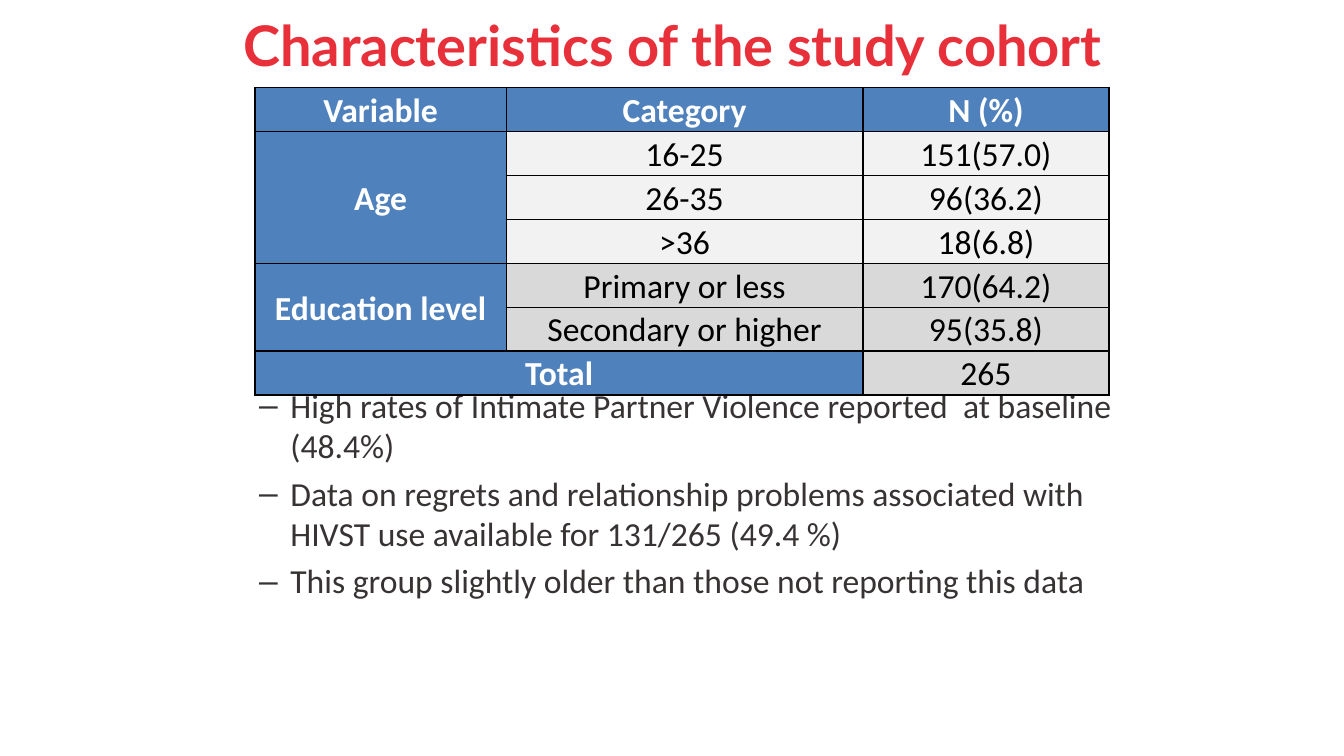
from dataclasses import dataclass

from pptx import Presentation
from pptx.dml.color import RGBColor
from pptx.enum.text import MSO_ANCHOR as Anchor, MSO_AUTO_SIZE as AutoSize, PP_ALIGN as Align
from pptx.oxml import parse_xml
from pptx.oxml.ns import nsdecls
from pptx.util import Pt

PX = 9144  # EMU per px, 100 px to the inch
COLORS = {"title": "E8303B", "body": "383333", "blue": "4F81BD", "light": "F2F2F2",
          "grey": "D9D9D9", "white": "FFFFFF", "black": "000000"}


@dataclass(frozen=True)
class Cell:
    row: int
    col: int
    text: str
    fill: str = "blue"
    rows: int = 1
    cols: int = 1


@dataclass(frozen=True)
class Group:
    label: str
    fill: str
    items: tuple[tuple[str, str], ...]


HEADERS = ("Variable", "Category", "N (%)")
GROUPS = (
    Group("Age", "light", (("16-25", "151(57.0)"), ("26-35", "96(36.2)"), (">36", "18(6.8)"))),
    Group("Education level", "grey",
          (("Primary or less", "170(64.2)"), ("Secondary or higher", "95(35.8)"))),
)
TOTAL = "265"
FINDINGS = (
    "High rates of Intimate Partner Violence reported  at baseline (48.4%)",
    "Data on regrets and relationship problems associated with HIVST use available for "
    "131/265 (49.4 %)",
    "This group slightly older than those not reporting this data",
)
COL_WIDTHS = (249, 354, 244)
ROW_HEIGHT = 41


def rgb(name: str) -> RGBColor:
    return RGBColor.from_string(COLORS[name])


def place(sp, left: int, top: int, width: int, height: int) -> None:
    sp.left, sp.top, sp.width, sp.height = (v * PX for v in (left, top, width, height))


def write(p, text: str, *, size: int = 24, font: str = "Calibri", color: str = "black",
          bold: bool = False, align=Align.CENTER, spacing: float = 1.0) -> None:
    p.alignment, p.line_spacing = align, spacing
    r = p.add_run()
    r.text = text
    r.font.size, r.font.name, r.font.bold = Pt(size), font, bold
    r.font.color.rgb = rgb(color)


def add_title(s) -> None:
    sp = s.shapes.title
    place(sp, 67, 0, 1200, 87)
    sp.text_frame.vertical_anchor = Anchor.MIDDLE
    sp.text_frame.auto_size = AutoSize.NONE
    write(sp.text_frame.paragraphs[0], "Characteristics of the study cohort",
          size=40, font="Lato", color="title", bold=True)


def add_findings(s) -> None:
    sp = s.placeholders[1]
    place(sp, 197, 377, 941, 54)
    tf = sp.text_frame
    tf.auto_size, tf.vertical_anchor = AutoSize.NONE, Anchor.TOP
    for i, text in enumerate(FINDINGS):
        p = tf.paragraphs[0] if i == 0 else tf.add_paragraph()
        p.level = 1
        pPr = p._p.get_or_add_pPr()
        pPr.set("marL", str(81 * PX))
        pPr.set("indent", str(-31 * PX))
        pPr.append(parse_xml(f'<a:buChar {nsdecls("a")} char="–"/>'))
        p.space_before = Pt(5 if i else 0)
        write(p, text, color="body", align=Align.LEFT)


def table_cells() -> list[Cell]:
    cells = [Cell(0, col, text) for col, text in enumerate(HEADERS)]
    row = 1
    for group in GROUPS:
        cells.append(Cell(row, 0, group.label, rows=len(group.items)))
        for category, count in group.items:
            cells += [Cell(row, 1, category, group.fill), Cell(row, 2, count, group.fill)]
            row += 1
    return cells + [Cell(row, 0, "Total", cols=2), Cell(row, 2, TOTAL, "grey")]


def add_borders(cell) -> None:
    tcPr = cell._tc.get_or_add_tcPr()
    for side in ("lnL", "lnR", "lnT", "lnB"):
        tcPr.append(parse_xml(
            f'<a:{side} {nsdecls("a")} w="{Pt(1)}"><a:solidFill>'
            f'<a:srgbClr val="{COLORS["black"]}"/></a:solidFill></a:{side}>'))


def add_cohort_table(s) -> None:
    cells = table_cells()
    n_rows = cells[-1].row + 1
    frame = s.shapes.add_table(n_rows, len(COL_WIDTHS), 253 * PX, 87 * PX,
                               sum(COL_WIDTHS) * PX, n_rows * ROW_HEIGHT * PX)
    table = frame.table
    table.horz_banding = False
    for column, width in zip(table.columns, COL_WIDTHS):
        column.width = width * PX
    for row in table.rows:
        row.height = ROW_HEIGHT * PX
    for cell in table.iter_cells():
        add_borders(cell)
        cell.margin_left = cell.margin_right = 7 * PX
        cell.margin_top = cell.margin_bottom = 0
        cell.vertical_anchor = Anchor.MIDDLE
    for c in cells:
        cell = table.cell(c.row, c.col)
        if c.rows * c.cols > 1:
            cell.merge(table.cell(c.row + c.rows - 1, c.col + c.cols - 1))
        cell.fill.solid()
        cell.fill.fore_color.rgb = rgb(c.fill)
        label = c.fill == "blue"
        write(cell.text_frame.paragraphs[0], c.text, bold=label,
              color="white" if label else "black", spacing=1.07)


def main() -> None:
    prs = Presentation()
    prs.slide_width, prs.slide_height = 1333 * PX, 750 * PX
    s = prs.slides.add_slide(prs.slide_layouts[1])
    add_title(s)
    add_findings(s)
    add_cohort_table(s)
    prs.save("out.pptx")


if __name__ == "__main__":
    main()
